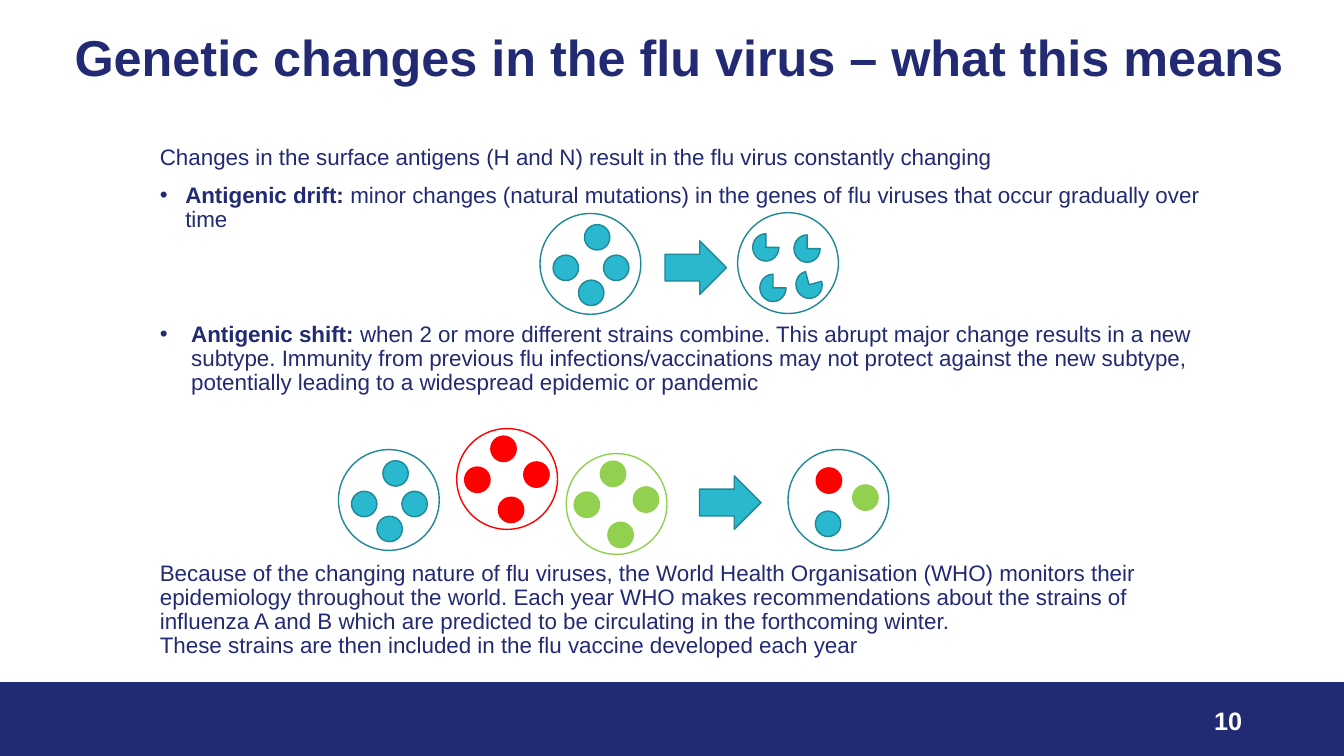
from lxml.etree import SubElement
from pptx import Presentation
from pptx.dml.color import RGBColor
from pptx.enum.shapes import MSO_SHAPE as Preset
from pptx.enum.text import MSO_ANCHOR as Anchor, PP_ALIGN as Align
from pptx.oxml.ns import qn
from pptx.util import Cm, Pt

NAVY = RGBColor(0x21, 0x2A, 0x73)
TEAL = RGBColor(0x29, 0xB8, 0xCE)
DARK_TEAL = RGBColor(0x1E, 0x88, 0x98)
RED = RGBColor(0xFF, 0x00, 0x00)
GREEN = RGBColor(0x92, 0xD0, 0x50)
WHITE = RGBColor(0xFF, 0xFF, 0xFF)

OUTLINES = {TEAL: DARK_TEAL}
CELL_SIZE = 2.54
DISC_SIZE = (0.64, 0.64)
PIE_SIZE = (0.66, 0.69)
TEAL_SPOTS = [(0.33, 1.05), (0.97, 1.68), (1.6, 1.05), (1.12, 0.28)]
STRAIN_SPOTS = [(0.2, 0.97), (1.05, 1.73), (1.69, 0.84), (0.86, 0.19)]
PIE_SPOTS = [(0.38, 0.53, 0), (0.56, 1.55, 0), (1.42, 0.56, 0), (1.47, 1.47, -15.2)]
MIXED_SPOTS = [(0.71, 0.46, RED), (0.69, 1.55, TEAL), (1.63, 0.89, GREEN)]


def add_shape(shapes, preset, left, top, width, height, fill, outline):
    """Add a flat preset shape, unfilled when fill is None."""
    shape = shapes.add_shape(preset, Cm(left), Cm(top), Cm(width), Cm(height))
    shape.shadow.inherit = False
    if fill is None:
        shape.fill.background()
    else:
        shape.fill.solid()
        shape.fill.fore_color.rgb = fill
    shape.line.color.rgb = outline
    shape.line.width = Pt(1)
    return shape


def add_virus(slide, left, top, outline, antigens, preset=Preset.FLOWCHART_CONNECTOR, size=DISC_SIZE):
    """Add a grouped cell with antigens given as x, y, colour and rotation."""
    shapes = slide.shapes.add_group_shape().shapes
    add_shape(shapes, Preset.OVAL, left, top, CELL_SIZE, CELL_SIZE, None, outline)
    for x, y, color, rotation in antigens:
        antigen = add_shape(shapes, preset, left + x, top + y, *size, color, OUTLINES.get(color, color))
        antigen.rotation = rotation


def add_arrow(slide, left, top):
    """Add a block arrow pointing to the changed virus."""
    add_shape(slide.shapes, Preset.RIGHT_ARROW, left, top, 1.55, 1.35, TEAL, DARK_TEAL)


def add_text_frame(slide, left, top, width, height, anchor):
    """Add a wrapping text box and return its frame."""
    frame = slide.shapes.add_textbox(Cm(left), Cm(top), Cm(width), Cm(height)).text_frame
    frame.word_wrap = True
    frame.vertical_anchor = anchor
    return frame


def add_run(paragraph, text, size, color=NAVY, bold=False):
    """Add one Arial run."""
    run = paragraph.add_run()
    run.text = text
    run.font.name = "Arial"
    run.font.size = Pt(size)
    run.font.bold = bold
    run.font.color.rgb = color


def set_bullet(paragraph, indent):
    """Give a paragraph a round bullet with a hanging indent."""
    properties = paragraph._p.get_or_add_pPr()
    properties.set("marL", str(Cm(indent)))
    properties.set("indent", str(-Cm(indent)))
    SubElement(properties, qn("a:buFont"), typeface="Arial")
    SubElement(properties, qn("a:buChar"), char="•")


def add_body_paragraph(frame, space_before, text, term="", indent=0):
    """Add a body paragraph, bulleted when it has an indent."""
    first = not frame.paragraphs[0].runs
    paragraph = frame.paragraphs[0] if first else frame.add_paragraph()
    paragraph.line_spacing = 0.9
    paragraph.space_before = Pt(space_before)
    if indent:
        set_bullet(paragraph, indent)
    if term:
        add_run(paragraph, term, 16, bold=True)
    add_run(paragraph, text, 16)
    return paragraph


def add_body(slide):
    """Add the explanations, spaced to leave room for the diagrams."""
    frame = add_text_frame(slide, 3.78, 3.56, 27, 13.51, Anchor.TOP)
    add_body_paragraph(
        frame, 0, "Changes in the surface antigens (H and N) result in the flu virus constantly changing")
    add_body_paragraph(
        frame, 10,
        "minor changes (natural mutations) in the genes of flu viruses that occur gradually over time",
        "Antigenic drift: ", 0.64)
    add_body_paragraph(
        frame, 64.5,
        "when 2 or more different strains combine. This abrupt major change results in a new subtype. "
        "Immunity from previous flu infections/vaccinations may not protect against the new subtype, "
        "potentially leading to a widespread epidemic or pandemic",
        "Antigenic shift: ", 0.79)
    closing = add_body_paragraph(
        frame, 119,
        "Because of the changing nature of flu viruses, the World Health Organisation (WHO) monitors "
        "their epidemiology throughout the world. Each year WHO makes recommendations about the strains "
        "of influenza A and B which are predicted to be circulating in the forthcoming winter. ")
    closing.add_line_break()
    add_run(closing, "These strains are then included in the flu vaccine developed each year", 16)


def add_drift_diagram(slide, teal_antigens):
    """Show a virus whose antigens change slightly."""
    add_virus(slide, 13.61, 5.38, DARK_TEAL, teal_antigens)
    add_arrow(slide, 16.76, 6.07)
    pies = [(x, y, TEAL, rotation) for x, y, rotation in PIE_SPOTS]
    add_virus(slide, 18.59, 5.36, DARK_TEAL, pies, Preset.PIE, PIE_SIZE)


def add_shift_diagram(slide, teal_antigens):
    """Show three strains combining into a new subtype."""
    add_virus(slide, 8.53, 11.33, DARK_TEAL, teal_antigens)
    for left, top, color in [(11.51, 10.8, RED), (14.27, 11.43, GREEN)]:
        add_virus(slide, left, top, color, [(x, y, color, 0) for x, y in STRAIN_SPOTS])
    add_arrow(slide, 17.63, 11.99)
    add_virus(slide, 19.86, 11.33, DARK_TEAL, [(*spot, 0) for spot in MIXED_SPOTS])


def main():
    """Build and save the slide."""
    presentation = Presentation()
    presentation.slide_width = Cm(33.87)
    presentation.slide_height = Cm(19.05)
    slide = presentation.slides.add_slide(presentation.slide_layouts[6])

    add_shape(slide.shapes, Preset.RECTANGLE, 0, 17.2, 33.87, 1.85, NAVY, NAVY)
    title = add_text_frame(slide, 1.63, 0.71, 32, 1.6, Anchor.MIDDLE).paragraphs[0]
    title.line_spacing = 0.9
    add_run(title, "Genetic changes in the flu virus – what this means", 36, bold=True)
    add_body(slide)

    teal_antigens = [(x, y, TEAL, 0) for x, y in TEAL_SPOTS]
    add_drift_diagram(slide, teal_antigens)
    add_shift_diagram(slide, teal_antigens)

    number = add_text_frame(slide, 23.93, 17.65, 7.62, 1.02, Anchor.MIDDLE).paragraphs[0]
    number.alignment = Align.RIGHT
    add_run(number, "10", 18, WHITE, True)
    presentation.save("out.pptx")


if __name__ == "__main__":
    main()
